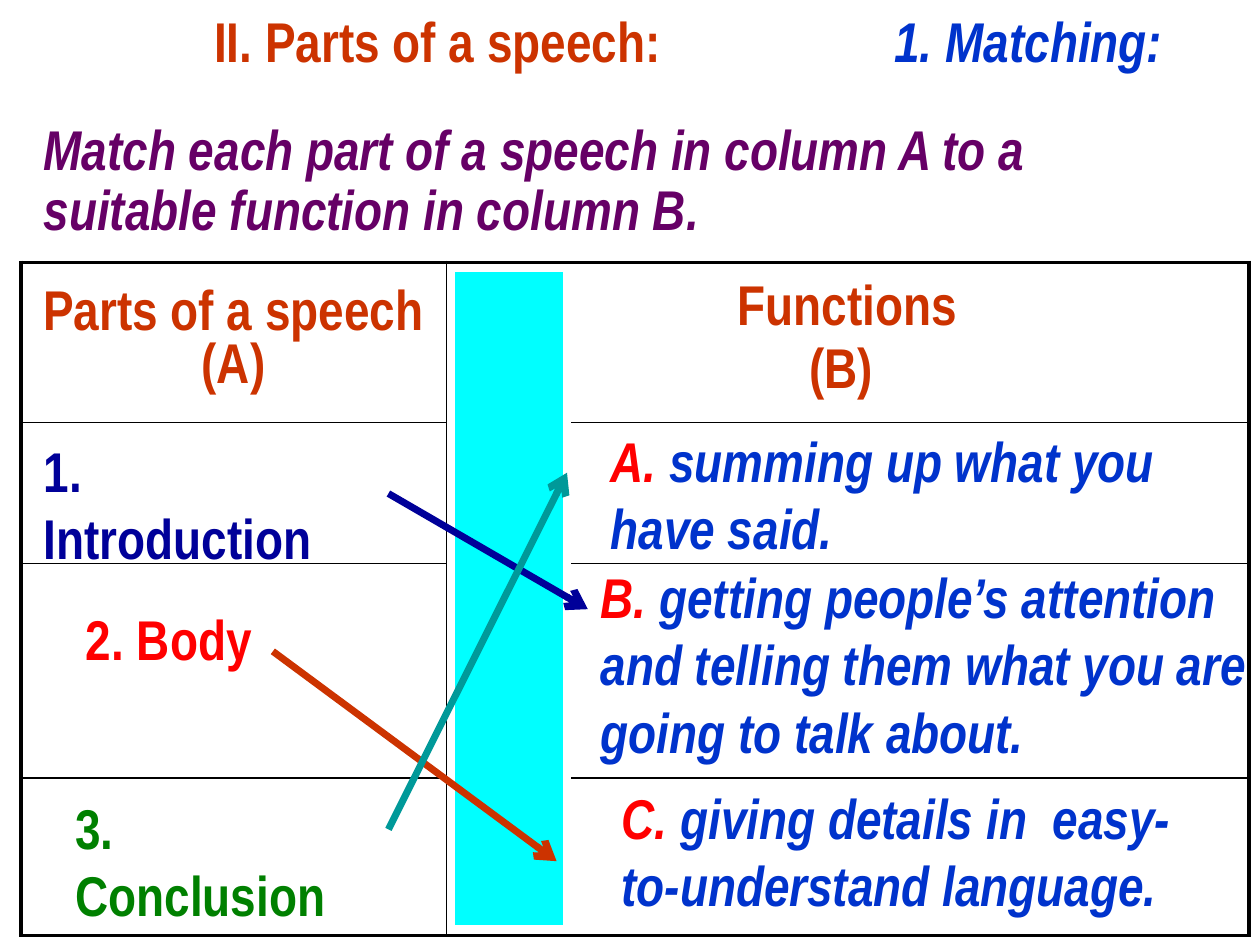
"""Build the slide that matches the parts of a speech to their functions."""
from dataclasses import dataclass
from typing import Optional

import lxml.etree
import pptx
import pptx.dml.color
import pptx.enum.shapes
import pptx.enum.text
import pptx.oxml
import pptx.oxml.ns
import pptx.util

Cm = pptx.util.Cm
Pt = pptx.util.Pt
qn = pptx.oxml.ns.qn


@dataclass(frozen=True)
class Theme:
    font: str = "Arial Narrow"
    size: float = 32
    space_before: float = 6.4
    outer_border: float = 2.25
    inner_border: float = 1
    band_line: float = 4.5
    arrow_line: float = 4
    white: str = "FFFFFF"
    black: str = "000000"
    heading: str = "CC3300"
    function: str = "0033CC"
    letter: str = "FF0000"
    instruction: str = "660066"
    introduction: str = "000099"
    body: str = "FF0000"
    conclusion: str = "008000"
    conclusion_arrow: str = "009999"
    band: str = "00FFFF"


@dataclass(frozen=True)
class Phrase:
    text: str
    color: str
    italic: bool = False


@dataclass(frozen=True)
class Caption:
    left: float
    top: float
    width: float
    height: float
    phrases: tuple[Phrase, ...]
    hanging: float = 0
    line_spacing: Optional[float] = None
    space_before: float = 0


@dataclass(frozen=True)
class Match:
    start: tuple[float, float]
    end: tuple[float, float]
    color: str


THEME = Theme()
COLUMN_WIDTHS = (8.58, 16.18)
ROW_HEIGHTS = (3.23, 2.84, 4.32, 3.18)
HEADINGS = (("Parts of a speech (A)",), ("Functions", "(B) "))


def part(left: float, top: float, width: float, text: str, color: str) -> Caption:
    """Describe one entry of column A."""
    return Caption(left, top, width, 1.6, (Phrase(text, color),), space_before=THEME.space_before)


def function(left: float, top: float, width: float, height: float, letter: str, text: str) -> Caption:
    """Describe one entry of column B."""
    phrases = (Phrase(letter, THEME.letter, True), Phrase(text, THEME.function, True))
    return Caption(left, top, width, height, phrases)


CAPTIONS = (
    Caption(3.81, 0, 11.63, 1.6, (Phrase(" II. Parts of a speech:", THEME.heading),), hanging=1.27),
    Caption(17.78, 0, 6.99, 1.6, (Phrase("1. Matching:", THEME.function, True),), hanging=1.27),
    Caption(0.63, 2.33, 23.5, 2.69, (Phrase(
        "Match each part of a speech in column A to a suitable function in column B.",
        THEME.instruction, True),), line_spacing=0.9),
    function(12.06, 8.47, 11.86, 2.97, "A. ", "summing up what you have said."),
    function(11.86, 11.22, 13.97, 4.32, "B. ",
             "getting people’s attention and telling them what you are going to talk about."),
    function(12.28, 15.67, 12.7, 2.97, "C. ", "giving details in  easy-to-understand language."),
    part(0.63, 8.67, 6.7, "1. Introduction", THEME.introduction),
    part(1.48, 12.07, 5.28, "2. Body", THEME.body),
    part(1.27, 15.87, 6.4, "3. Conclusion", THEME.conclusion),
)
MATCHES = (
    Match((7.83, 9.95), (11.85, 12.28), THEME.introduction),
    Match((5.5, 13.13), (11.22, 17.36), THEME.heading),
    Match((7.83, 16.72), (11.43, 9.53), THEME.conclusion_arrow),
)


def rgb(color: str) -> pptx.dml.color.RGBColor:
    """Turn a hex string into a colour."""
    return pptx.dml.color.RGBColor.from_string(color)


def add_phrase(paragraph, phrase: Phrase) -> None:
    """Add one styled run to a paragraph."""
    run = paragraph.add_run()
    run.text = phrase.text
    run.font.name = THEME.font
    run.font.size = Pt(THEME.size)
    run.font.bold = True
    run.font.italic = phrase.italic
    run.font.color.rgb = rgb(phrase.color)


def add_caption(slide, caption: Caption) -> None:
    """Add one wrapped text box."""
    box = slide.shapes.add_textbox(
        Cm(caption.left), Cm(caption.top), Cm(caption.width), Cm(caption.height))
    frame = box.text_frame
    frame.word_wrap = True
    frame.auto_size = pptx.enum.text.MSO_AUTO_SIZE.SHAPE_TO_FIT_TEXT
    paragraph = frame.paragraphs[0]
    paragraph.line_spacing = caption.line_spacing
    paragraph.space_before = Pt(caption.space_before)
    if caption.hanging:
        properties = paragraph._p.get_or_add_pPr()
        properties.set("marL", str(Cm(caption.hanging)))
        properties.set("indent", str(-Cm(caption.hanging)))
    for phrase in caption.phrases:
        add_phrase(paragraph, phrase)


def set_borders(cell, edges: dict[str, bool]) -> None:
    """Draw the cell's borders, thicker on the table's outer edges."""
    properties = cell._tc.get_or_add_tcPr()
    for position, (side, outer) in enumerate(edges.items()):
        width = THEME.outer_border if outer else THEME.inner_border
        border = lxml.etree.Element(qn(f"a:ln{side}"), w=str(Pt(width)))
        fill = lxml.etree.SubElement(border, qn("a:solidFill"))
        lxml.etree.SubElement(fill, qn("a:srgbClr"), val=THEME.black)
        properties.insert(position, border)


def add_matching_table(slide) -> None:
    """Add the two-column table with its headings."""
    rows, columns = len(ROW_HEIGHTS), len(COLUMN_WIDTHS)
    table = slide.shapes.add_table(
        rows, columns, Cm(0.42), Cm(5.29), Cm(sum(COLUMN_WIDTHS)), Cm(sum(ROW_HEIGHTS))).table
    table.first_row = False
    table.horz_banding = False
    for column, width in zip(table.columns, COLUMN_WIDTHS):
        column.width = Cm(width)
    for r, height in enumerate(ROW_HEIGHTS):
        table.rows[r].height = Cm(height)
        for c in range(columns):
            cell = table.cell(r, c)
            cell.fill.solid()
            cell.fill.fore_color.rgb = rgb(THEME.white)
            set_borders(cell, {"L": c == 0, "R": c == columns - 1, "T": r == 0, "B": r == rows - 1})
    for c, lines in enumerate(HEADINGS):
        cell = table.cell(0, c)
        cell.vertical_anchor = pptx.enum.text.MSO_ANCHOR.MIDDLE
        for index, line in enumerate(lines):
            frame = cell.text_frame
            paragraph = frame.add_paragraph() if index else frame.paragraphs[0]
            paragraph.alignment = pptx.enum.text.PP_ALIGN.CENTER
            paragraph.space_before = Pt(THEME.space_before)
            add_phrase(paragraph, Phrase(line, THEME.heading))


def add_band(slide) -> None:
    """Add the coloured band between the columns."""
    band = slide.shapes.add_shape(
        pptx.enum.shapes.MSO_SHAPE.RECTANGLE, Cm(9.1), Cm(5.4), Cm(2.33), Cm(13.33))
    band.shadow.inherit = False
    band.fill.solid()
    band.fill.fore_color.rgb = rgb(THEME.band)
    band.line.color.rgb = rgb(THEME.white)
    band.line.width = Pt(THEME.band_line)


def add_match(slide, match: Match) -> None:
    """Add the arrow from a part to its function."""
    arrow = slide.shapes.add_connector(
        pptx.enum.shapes.MSO_CONNECTOR.STRAIGHT, *map(Cm, match.start + match.end))
    arrow.line.color.rgb = rgb(match.color)
    arrow.line.width = Pt(THEME.arrow_line)
    lxml.etree.SubElement(arrow.line._get_or_add_ln(), qn("a:tailEnd"), type="arrow")
    lxml.etree.SubElement(arrow._element.spPr, qn("a:effectLst"))


def main() -> None:
    """Build and save the slide."""
    deck = pptx.Presentation()
    deck.slide_width, deck.slide_height = Cm(25.4), Cm(19.05)
    slide = deck.slides.add_slide(deck.slide_layouts[6])
    add_matching_table(slide)
    for caption in CAPTIONS:
        add_caption(slide, caption)
    add_band(slide)
    for match in MATCHES:
        add_match(slide, match)
    deck.save("out.pptx")


if __name__ == "__main__":
    main()
